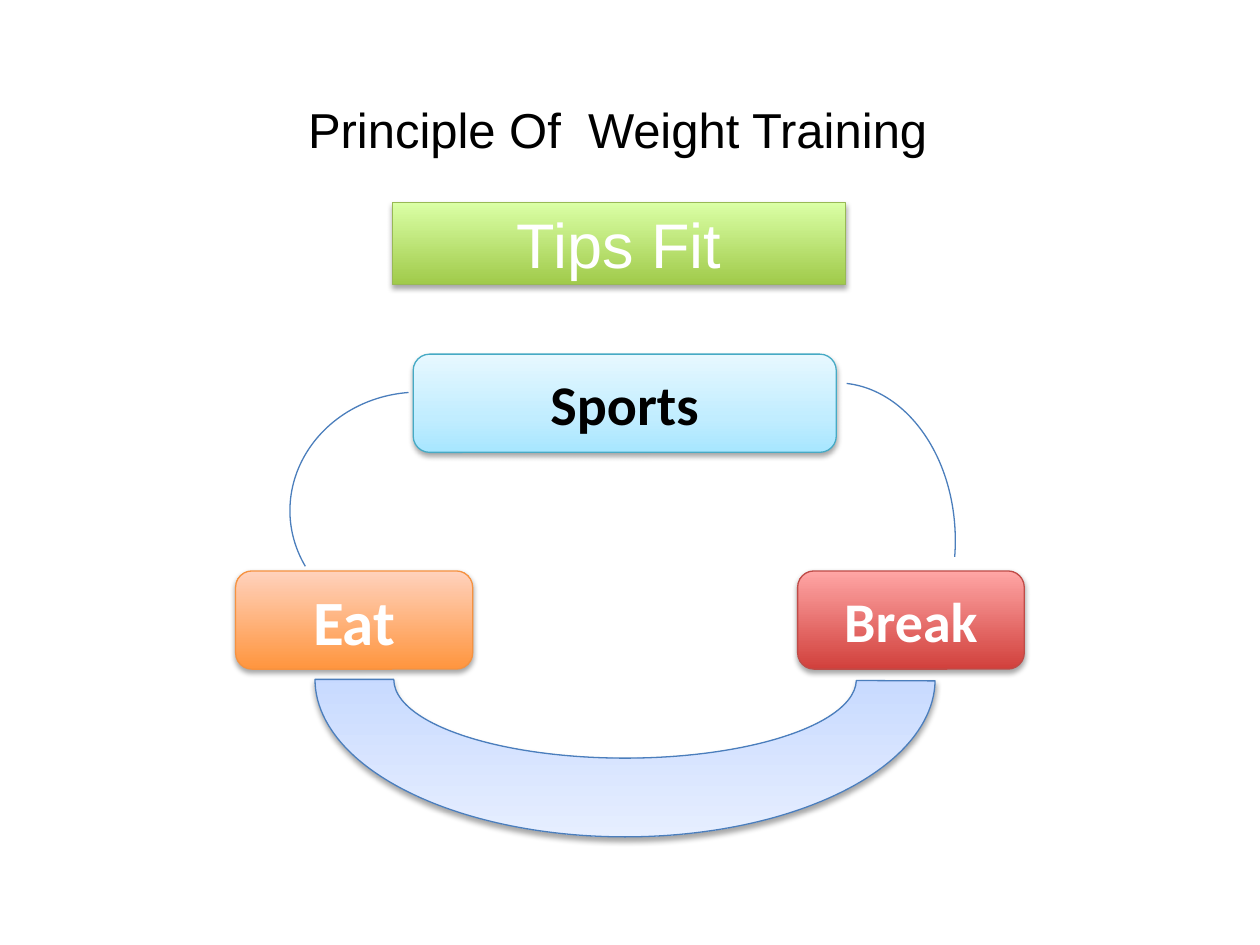
from dataclasses import dataclass

from lxml.etree import SubElement
from pptx import Presentation
from pptx.dml.color import RGBColor
from pptx.enum.shapes import MSO_SHAPE
from pptx.enum.text import MSO_ANCHOR, PP_ALIGN
from pptx.oxml.ns import qn
from pptx.util import Cm, Pt


@dataclass(frozen=True)
class Theme:
    """Hold the colours, fonts and type sizes of the slide."""
    dark: str = "000000"
    light: str = "FFFFFF"
    curve: str = "4B7EBC"
    plain: str = "Arial"
    strong: str = "Calibri"
    small: int = 28
    mid: int = 32
    large: int = 36
    thin: float = 0.75
    green: tuple = ("98B955", ((0, "A0CA4A"), (100, "DAFFA5")))
    aqua: tuple = ("46AAC5", ((0, "A7E6FF"), (35, "C1EDFF"), (100, "E7F8FF")))
    orange: tuple = ("F69240", ((0, "FF953E"), (100, "FFD2BD")))
    red: tuple = ("BF4C48", ((0, "D1403C"), (100, "FFA6A5")))
    blue: tuple = ("4B7EBC", ((0, "A4C4FF"), (35, "BFD4FF"), (100, "E6EEFF")))


THEME = Theme()


def write(shape, text, font=THEME.strong, size=THEME.mid, color=THEME.light, bold=True):
    """Put one centred line of formatted text in a shape."""
    frame = shape.text_frame
    frame.word_wrap = True
    frame.vertical_anchor = MSO_ANCHOR.MIDDLE
    line = frame.paragraphs[0]
    line.alignment = PP_ALIGN.CENTER
    run = line.add_run()
    run.text = text
    run.font.name, run.font.size, run.font.bold = font, Pt(size), bold
    run.font.color.rgb = RGBColor.from_string(color)


def draw(slide, kind, box, edge, turn=0, bends=()):
    """Add an unfilled outline of a preset kind."""
    shape = slide.shapes.add_shape(kind, *map(Cm, box))
    shape.rotation = turn
    for i, bend in enumerate(bends):
        shape.adjustments[i] = bend
    shape.fill.background()
    shape.line.color.rgb = RGBColor.from_string(edge)
    shape.line.width = Pt(THEME.thin)
    shape.shadow.inherit = False
    return shape


def shade(shape, stops):
    """Fill a shape with an upward gradient and give it a soft shadow."""
    shape.fill.gradient()
    shape.fill.gradient_angle = 90
    props = shape.element.spPr
    ramp = props.find(".//" + qn("a:gsLst"))
    for old in list(ramp):
        ramp.remove(old)
    for spot, color in stops:
        stop = SubElement(ramp, qn("a:gs"), pos=str(spot * 1000))
        SubElement(stop, qn("a:srgbClr"), val=color)
    cast = SubElement(props.find(qn("a:effectLst")), qn("a:outerShdw"),
                      blurRad=str(Pt(3.1)), dist=str(Pt(1.8)),
                      dir="5400000", rotWithShape="0")
    tint = SubElement(cast, qn("a:srgbClr"), val=THEME.dark)
    SubElement(tint, qn("a:alpha"), val="35000")


def block(slide, kind, box, style, turn=0, bends=()):
    """Add a shaded shape in one of the theme's styles."""
    edge, stops = style
    shape = draw(slide, kind, box, edge, turn, bends)
    shade(shape, stops)
    return shape


def head(slide, box):
    """Place the title and the banner below it."""
    left, top, width, height = box
    title = slide.shapes.title
    title.left, title.top, title.width, title.height = map(Cm, (left, top, width, 1.45))
    write(title, "Principle Of  Weight Training", font=THEME.plain,
          size=THEME.small, color=THEME.dark, bold=False)
    banner = block(slide, MSO_SHAPE.RECTANGLE,
                   (left + 3.65, top + height - 1.65, 9.12, 1.65), THEME.green)
    write(banner, "Tips Fit", font=THEME.plain, size=THEME.large, bold=False)


def ring(slide, box):
    """Place the three linked steps and the curves between them."""
    left, top, width, height = box
    tall, low = 1.98, top + 4.37
    steps = (
        ("Sports", left + 3.58, top, 8.53, THEME.aqua, THEME.mid, THEME.dark),
        ("Eat", left, low, 4.78, THEME.orange, THEME.large, THEME.light),
        ("Break", left + width - 4.57, low, 4.57, THEME.red, THEME.mid, THEME.light),
    )
    for text, x, y, wide, style, size, color in steps:
        step = block(slide, MSO_SHAPE.ROUNDED_RECTANGLE, (x, y, wide, tall), style)
        write(step, text, size=size, color=color)
    draw(slide, MSO_SHAPE.ARC, (left + 9.73, top + 0.58, 4.78, 6.35),
         THEME.curve, bends=(164.17, 4.79))
    draw(slide, MSO_SHAPE.ARC, (left + 1.3, top + 0.56, 4.72, 5.13),
         THEME.curve, turn=266.2, bends=(148.07, 215.74))
    block(slide, MSO_SHAPE.BLOCK_ARC, (left + 1.6, top + height - 6.35, 12.5, 6.35),
          THEME.blue, turn=180, bends=(108.17, 0, 0.25))


def main():
    """Build the slide and save it."""
    deck = Presentation()
    deck.slide_width, deck.slide_height = Cm(25.4), Cm(19.05)
    slide = deck.slides.add_slide(deck.slide_layouts[5])
    head(slide, (4.27, 1.88, 16.36, 3.86))
    ring(slide, (4.75, 7.14, 15.9, 9.73))
    deck.save("out.pptx")


if __name__ == "__main__":
    main()
